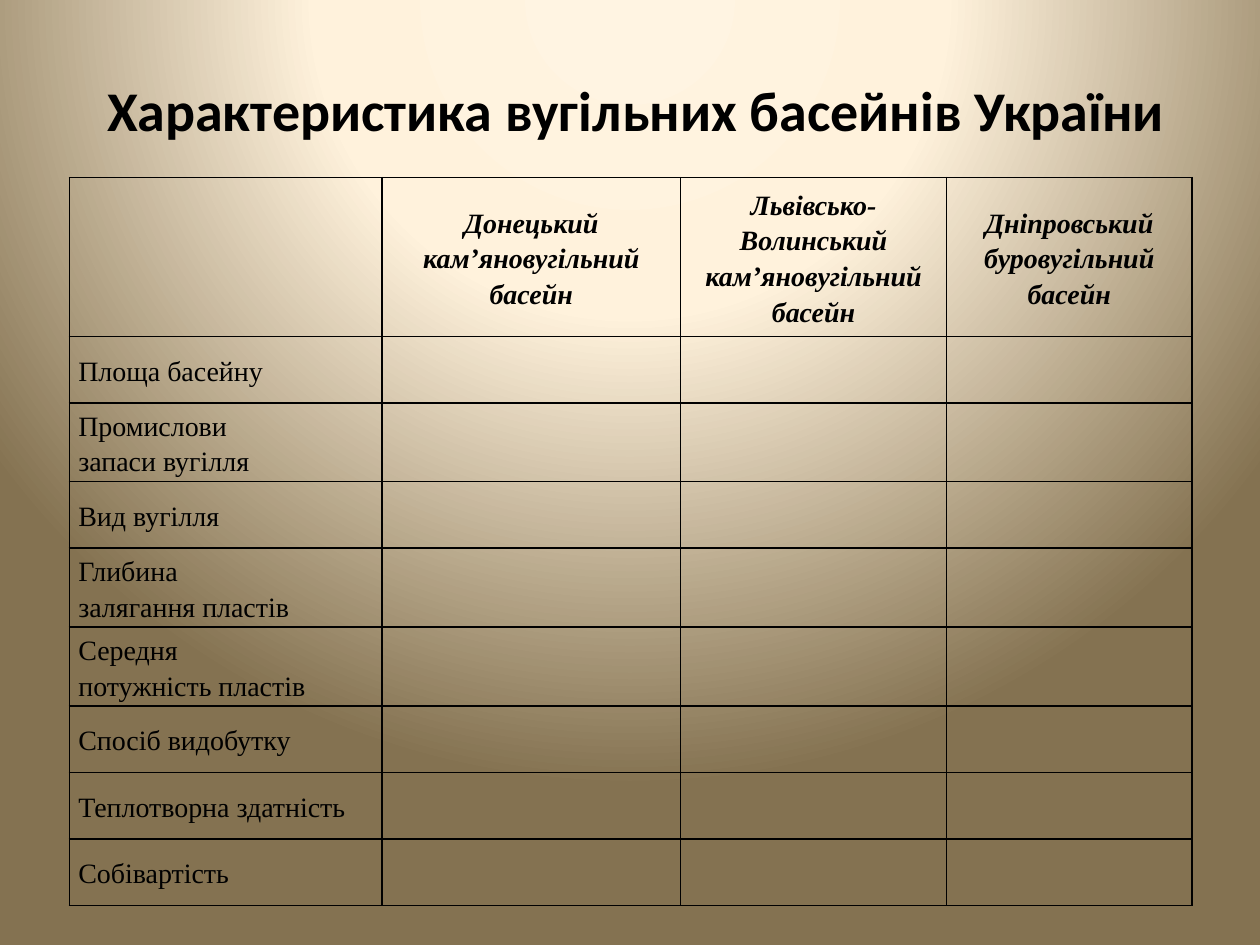
from pptx import Presentation
from pptx.dml.color import RGBColor
from pptx.enum.text import MSO_ANCHOR, MSO_AUTO_SIZE, PP_ALIGN
from pptx.oxml import parse_xml
from pptx.util import Cm, Pt

MIDDLE = MSO_ANCHOR.MIDDLE
CENTER, LEFT = PP_ALIGN.CENTER, PP_ALIGN.LEFT
NS = 'xmlns:a="http://schemas.openxmlformats.org/drawingml/2006/main"'

# Content
TITLE = "Характеристика вугільних басейнів України"
BASINS = [
    "Донецький кам’яновугільний басейн",
    "Львівсько-Волинський кам’яновугільний басейн",
    "Дніпровський буровугільний басейн",
]
FEATURES = [
    "Площа басейну",
    "Промислови\nзапаси вугілля",
    "Вид вугілля",
    "Глибина\nзалягання пластів",
    "Середня\nпотужність пластів",
    "Спосіб видобутку",
    "Теплотворна здатність",
    "Собівартість",
]

# Look
COLORS = {"text": "000000", "border": "000000",
          "glow": "FFF4E2", "cream": "FFF2DC", "brown": "847251"}
GRADIENT = [(0, "glow"), (40, "cream"), (100, "brown")]
COL_WIDTHS = [6.3, 6.02, 5.36, 4.95]
HEADER_HEIGHT, ONE_LINE, TWO_LINES = 3.2, 1.34, 1.59
LEFT_EDGE, TABLE_TOP = 1.4, 3.58


def set_font(p, name, size, bold, italic=False):
    p.font.name, p.font.size = name, Pt(size)
    p.font.bold, p.font.italic = bold, italic
    p.font.color.rgb = RGBColor.from_string(COLORS["text"])


def set_background(s):
    s.background.fill.solid()
    stops = "".join(f'<a:gs pos="{pos * 1000}"><a:srgbClr val="{COLORS[name]}"/></a:gs>'
                    for pos, name in GRADIENT)
    bg = s.element.xpath("./p:cSld/p:bg/p:bgPr")[0]
    bg.replace(bg[0], parse_xml(
        f'<a:gradFill {NS} rotWithShape="1"><a:gsLst>{stops}</a:gsLst>'
        '<a:path path="circle"><a:fillToRect l="50000" t="-80000" r="50000" b="180000"/>'
        '</a:path></a:gradFill>'))


def format_cell(cell):
    cell.vertical_anchor = MIDDLE
    cell.margin_left = cell.margin_right = Cm(0.18)
    cell.margin_top = cell.margin_bottom = 0
    cell.fill.background()
    tc_pr = cell._tc.get_or_add_tcPr()
    for i, side in enumerate(("lnL", "lnR", "lnT", "lnB")):
        tc_pr.insert(i, parse_xml(
            f'<a:{side} {NS} w="{Pt(1)}"><a:solidFill>'
            f'<a:srgbClr val="{COLORS["border"]}"/></a:solidFill></a:{side}>'))


def write_cell(cell, text, align, header):
    cell.text = text
    for p in cell.text_frame.paragraphs:
        p.alignment, p.line_spacing = align, 1.15
        set_font(p, "Times New Roman", 16, header, header)


prs = Presentation()
prs.slide_width, prs.slide_height = Cm(25.4), Cm(19.05)
s = prs.slides.add_slide(prs.slide_layouts[5])
set_background(s)

# Title
title = s.shapes.title
title.left, title.top, title.width, title.height = Cm(LEFT_EDGE), Cm(1.2), Cm(22.86), Cm(1.98)
tf = title.text_frame
tf.text = TITLE
tf.auto_size, tf.vertical_anchor = MSO_AUTO_SIZE.NONE, MIDDLE
tf.paragraphs[0].alignment = CENTER
set_font(tf.paragraphs[0], "Calibri", 32, True)

# Table: basins across, features down
heights = [HEADER_HEIGHT] + [TWO_LINES if "\n" in f else ONE_LINE for f in FEATURES]
table = s.shapes.add_table(len(heights), len(COL_WIDTHS), Cm(LEFT_EDGE), Cm(TABLE_TOP),
                           Cm(sum(COL_WIDTHS)), Cm(sum(heights))).table
table.first_row = table.horz_banding = False
for col, width in zip(table.columns, COL_WIDTHS):
    col.width = Cm(width)
for row, height in zip(table.rows, heights):
    row.height = Cm(height)
for cell in table.iter_cells():
    format_cell(cell)
for c, basin in enumerate(BASINS, 1):
    write_cell(table.cell(0, c), basin, CENTER, True)
for r, feature in enumerate(FEATURES, 1):
    write_cell(table.cell(r, 0), feature, LEFT, False)

prs.save("out.pptx")
